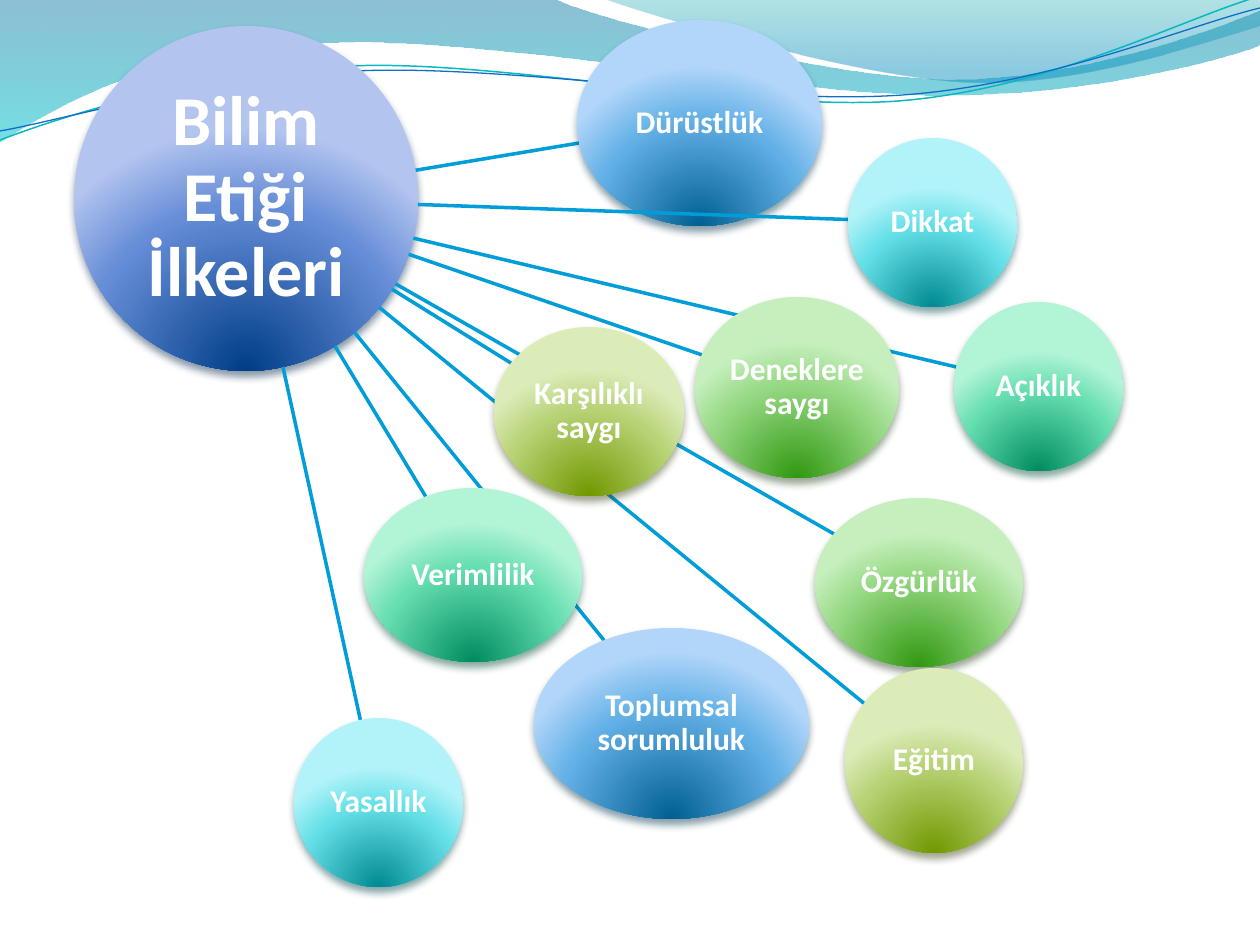
from math import hypot

from lxml import etree
from pptx import Presentation
from pptx.dml.color import RGBColor
from pptx.enum.shapes import MSO_CONNECTOR, MSO_SHAPE
from pptx.enum.text import MSO_ANCHOR, PP_ALIGN
from pptx.oxml.ns import qn
from pptx.util import Pt

OVAL = MSO_SHAPE.OVAL
LINE = MSO_CONNECTOR.STRAIGHT
MIDDLE = MSO_ANCHOR.MIDDLE
CENTER = PP_ALIGN.CENTER
EMU = 914400 / 126

HUB = ("Bilim Etiği İlkeleri", (74, 26, 344, 345), "royal")
NODES = [
    ("Dürüstlük", (577, 20, 245, 206), "blue"),
    ("Dikkat", (848, 138, 169, 169), "cyan"),
    ("Açıklık", (954, 302, 169, 169), "mint"),
    ("Özgürlük", (815, 498, 208, 169), "green"),
    ("Eğitim", (845, 668, 178, 185), "olive"),
    ("Toplumsal sorumluluk", (534, 628, 275, 191), "blue"),
    ("Yasallık", (294, 718, 169, 169), "cyan"),
    ("Verimlilik", (364, 488, 218, 174), "mint"),
    ("Deneklere saygı", (695, 297, 204, 181), "green"),
    ("Karşılıklı saygı", (494, 327, 190, 169), "olive"),
]
TONES = {
    "royal": ("003D87", "668DD7", "B3C4EF", "042747"),
    "blue": ("006091", "64B1E7", "B1D6F9", "00374C"),
    "cyan": ("008A91", "64DFE7", "B1F3F9", "024B4E"),
    "mint": ("008C60", "65DEB0", "B2F4D6", "044A37"),
    "green": ("319811", "95D882", "C6EFBD", "2B4821"),
    "olive": ("729800", "B8D275", "DBECB9", "3A4519"),
}
WAVES = [
    ([(0, 0), (554, -1), (600, 21, 837, 79, 955, 79),
      (1075, 79, 1207, 33, 1260, 11), (1261, 45),
      (1239, 55, 1096, 96, 940, 95), (784, 95, 481, 35, 324, 43),
      (163, 45, 58, 105, -1, 142)],
     [(0, "0074A1", 45), (100, "00C6CF", 55)]),
    ([(604, -1), (642, 14, 859, 78, 969, 82),
      (1079, 87, 1211, 40, 1260, 26), (1260, 0)],
     [(0, "00A1A9", 30), (80, "008BBF", 45)]),
]
STRANDS = [
    ([(0, 140), (60, 117, 199, 72, 349, 66), (498, 59, 747, 112, 898, 101),
      (1050, 89, 1182, 19, 1257, -3)], "0AB8BF", 0.85),
    ([(0, 131), (59, 121, 207, 77, 357, 71), (508, 64, 751, 106, 903, 95),
      (1053, 84, 1186, 26, 1260, 8)], "0F6FC6", 0.75),
]


def px(num):
    """Turn pixels into EMU."""
    return round(num * EMU)


def color(text):
    """Turn a hex string into a colour."""
    return RGBColor.from_string(text)


def put(item, values):
    """Set each named value on an object."""
    for name, value in values.items():
        setattr(item, name, value)


def add(parent, tag, **attrs):
    """Append a DrawingML element to its parent."""
    return etree.SubElement(
        parent, qn("a:" + tag), {key: str(val) for key, val in attrs.items()})


def tint(parent, text, alpha):
    """Append a colour with its opacity in percent."""
    add(add(parent, "srgbClr", val=text), "alpha", val=alpha * 1000)


def blend(shape, stops, ring=False):
    """Fill a shape with a downward or a circular gradient."""
    shape.fill.background()
    props = shape._element.spPr
    blank = props.find(qn("a:noFill"))
    grad = add(props, "gradFill", rotWithShape=1)
    props.replace(blank, grad)
    items = add(grad, "gsLst")
    for pos, text, alpha in stops:
        tint(add(items, "gs", pos=pos * 1000), text, alpha)
    if ring:
        add(add(grad, "path", path="circle"), "fillToRect",
            l=50000, t=130000, r=50000, b=-30000)
    else:
        add(grad, "lin", ang=5400000, scaled=0)


def bend(shape, parts):
    """Join each run of three line steps that stands for a curve."""
    steps = iter(shape._element.findall(".//" + qn("a:lnTo")))
    for part in parts[1:]:
        group = [next(steps) for _ in range(len(part) // 2)]
        if len(group) == 3:
            curve = etree.Element(qn("a:cubicBezTo"))
            group[0].addprevious(curve)
            for step in group:
                curve.append(step[0])
                step.getparent().remove(step)


def outline(slide, parts, close):
    """Draw a freeform from line and cubic curve parts."""
    dots = [part[i:i + 2] for part in parts for i in range(0, len(part), 2)]
    pen = slide.shapes.build_freeform(*dots[0], scale=EMU)
    pen.add_line_segments(dots[1:], close=close)
    shape = pen.convert_to_shape()
    bend(shape, parts)
    shape.shadow.inherit = False
    return shape


def banner(slide):
    """Draw the waves and strands along the top."""
    for parts, stops in WAVES:
        shape = outline(slide, parts, True)
        blend(shape, stops)
        shape.line.fill.background()
    for parts, tone, width in STRANDS:
        shape = outline(slide, parts, False)
        shape.fill.background()
        shape.line.color.rgb = color(tone)
        shape.line.width = Pt(width)


def ball(slide, label, box, tone, size, inset):
    """Draw a shaded ball with its label in the given box."""
    dark, mid, light, shade = TONES[tone]
    shape = slide.shapes.add_shape(OVAL, *map(px, box))
    blend(shape, [(0, dark, 100), (68, mid, 100), (100, light, 100)], True)
    shape.line.fill.background()
    shape.shadow.inherit = False
    effects = shape._element.spPr.find(qn("a:effectLst"))
    tint(add(effects, "outerShdw", blurRad=Pt(4.5), dist=Pt(3),
             dir=5400000, rotWithShape=0), shade, 48)
    frame = shape.text_frame
    sides = ("left", "top", "right", "bottom")
    put(frame, {"margin_" + side: px(inset) for side in sides})
    put(frame, {"word_wrap": True, "vertical_anchor": MIDDLE})
    para = frame.paragraphs[0]
    put(para, {"alignment": CENTER, "line_spacing": 0.9})
    run = para.add_run()
    run.text = label
    put(run.font, {"name": "Calibri", "size": Pt(size), "bold": True})
    run.font.color.rgb = color("FFFFFF")


def spoke(slide, start, end):
    """Join the rims of two ovals along the line between their centres."""
    (ax, ay), (bx, by) = [(x + w / 2, y + h / 2) for x, y, w, h in (start, end)]
    dx, dy = bx - ax, by - ay
    out, back = [1 / hypot(2 * dx / w, 2 * dy / h) for _, _, w, h in (start, end)]
    ends = (ax + dx * out, ay + dy * out, bx - dx * back, by - dy * back)
    line = slide.shapes.add_connector(LINE, *map(px, ends))
    line.line.color.rgb = color("009DD9")
    line.line.width = Pt(2)
    add(line._element.spPr, "effectLst")


def web(slide):
    """Draw the hub with a spoke and a ball for each principle."""
    ball(slide, *HUB, 40, 4)
    for label, box, tone in NODES:
        spoke(slide, HUB[1], box)
        ball(slide, label, box, tone, 18, 1)


def main():
    """Build and save the slide."""
    deck = Presentation()
    put(deck, {"slide_width": px(1260), "slide_height": px(945)})
    slide = deck.slides.add_slide(deck.slide_layouts[6])
    banner(slide)
    web(slide)
    deck.save("out.pptx")


if __name__ == "__main__":
    main()
